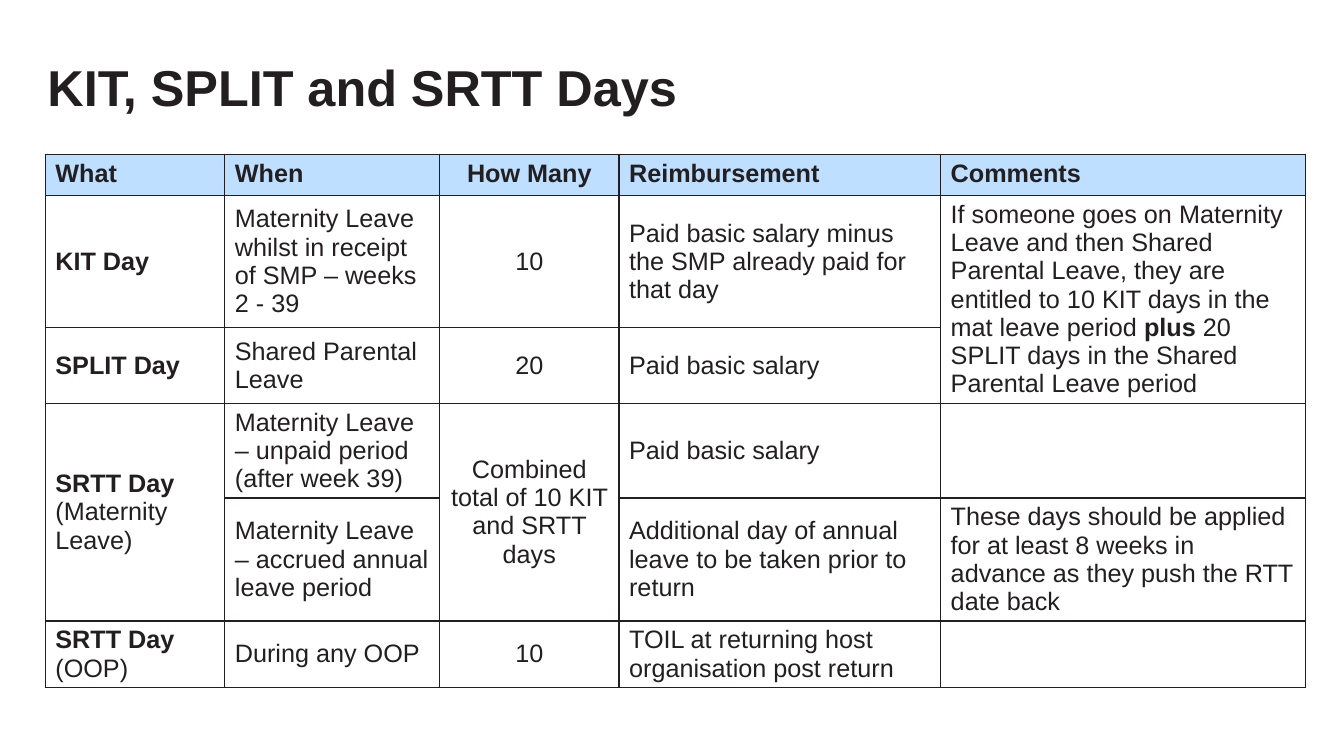
from lxml.etree import SubElement
from pptx import Presentation
from pptx.dml.color import RGBColor
from pptx.enum.text import MSO_ANCHOR, MSO_AUTO_SIZE, PP_ALIGN
from pptx.oxml.ns import qn
from pptx.util import Inches, Pt

# Content: ** marks the start and end of bold text
TITLE = "KIT, SPLIT and SRTT Days"
ROWS = [
    ["**What**", "**When**", "**How Many**", "**Reimbursement**", "**Comments**"],
    ["**KIT Day**", "Maternity Leave whilst in receipt of SMP – weeks 2 - 39", "10",
     "Paid basic salary minus the SMP already paid for that day",
     "If someone goes on Maternity Leave and then Shared Parental Leave, they are "
     "entitled to 10 KIT days in the mat leave period **plus** 20 SPLIT days in "
     "the Shared Parental Leave period"],
    ["**SPLIT Day**", "Shared Parental Leave", "20", "Paid basic salary", ""],
    ["**SRTT Day **(Maternity Leave)", "Maternity Leave – unpaid period (after week 39)",
     "Combined total of 10 KIT and SRTT days", "Paid basic salary", ""],
    ["", "Maternity Leave – accrued annual leave period", "",
     "Additional day of annual leave to be taken prior to return",
     "These days should be applied for at least 8 weeks in advance as they push "
     "the RTT date back"],
    ["**SRTT Day **(OOP)", "During any OOP", "10",
     "TOIL at returning host organisation post return", ""],
]
TALL_CELLS = [(1, 4), (3, 0), (3, 2)]  # each covers the row below too
COLUMN_WIDTHS = [1.78, 2.13, 1.78, 3.19, 3.62]
ROW_HEIGHTS = [0.41, 1.31, 0.75, 0.94, 1.22, 0.66]
CENTRED_COLUMN = 2

FONT = "Arial"
INK = RGBColor(0x23, 0x1F, 0x20)
HEADER_BLUE = RGBColor(0xBE, 0xDF, 0xFF)
WHITE = RGBColor(0xFF, 0xFF, 0xFF)


def set_font(font, size):
    font.name, font.size, font.color.rgb = FONT, Pt(size), INK


def add_borders(cell):
    properties = cell._tc.get_or_add_tcPr()
    for side in ("lnL", "lnR", "lnT", "lnB"):
        line = SubElement(properties, qn(f"a:{side}"), w=str(Pt(1)))
        fill = SubElement(line, qn("a:solidFill"))
        SubElement(fill, qn("a:srgbClr"), val=str(INK))


def fill_cell(cell, text, row, column):
    add_borders(cell)
    cell.fill.solid()
    cell.fill.fore_color.rgb = WHITE if row else HEADER_BLUE
    cell.vertical_anchor = MSO_ANCHOR.MIDDLE if row else MSO_ANCHOR.TOP
    para = cell.text_frame.paragraphs[0]
    set_font(para.font, 18)
    para.alignment = PP_ALIGN.CENTER if column == CENTRED_COLUMN else PP_ALIGN.LEFT
    for index, part in enumerate(text.split("**")):
        if part:
            span = para.add_run()
            span.text = part
            set_font(span.font, 18)
            span.font.bold = index % 2 == 1


def add_title(page):
    title = page.shapes.title
    title.left, title.top = Inches(0.47), Inches(0.42)
    title.width, title.height = Inches(12.47), Inches(0.95)
    frame = title.text_frame
    frame.text = TITLE
    frame.auto_size = MSO_AUTO_SIZE.NONE
    frame.word_wrap = True
    frame.vertical_anchor = MSO_ANCHOR.MIDDLE
    frame.margin_left = frame.margin_right = frame.margin_top = frame.margin_bottom = 0
    para = frame.paragraphs[0]
    para.alignment = PP_ALIGN.LEFT
    para.line_spacing = 0.9
    set_font(para.font, 36)
    para.font.bold = True


def add_days_table(page):
    table = page.shapes.add_table(
        len(ROWS), len(COLUMN_WIDTHS), Inches(0.45), Inches(1.53),
        Inches(sum(COLUMN_WIDTHS)), Inches(sum(ROW_HEIGHTS))).table
    table.horz_banding = False
    for column, width in zip(table.columns, COLUMN_WIDTHS):
        column.width = Inches(width)
    for row, height in zip(table.rows, ROW_HEIGHTS):
        row.height = Inches(height)
    for row, texts in enumerate(ROWS):
        for column, text in enumerate(texts):
            fill_cell(table.cell(row, column), text, row, column)
    for row, column in TALL_CELLS:
        table.cell(row, column).merge(table.cell(row + 1, column))


def main():
    deck = Presentation()
    deck.slide_width, deck.slide_height = Inches(13.33), Inches(7.5)
    page = deck.slides.add_slide(deck.slide_layouts[5])
    add_title(page)
    add_days_table(page)
    deck.save("out.pptx")


if __name__ == "__main__":
    main()
